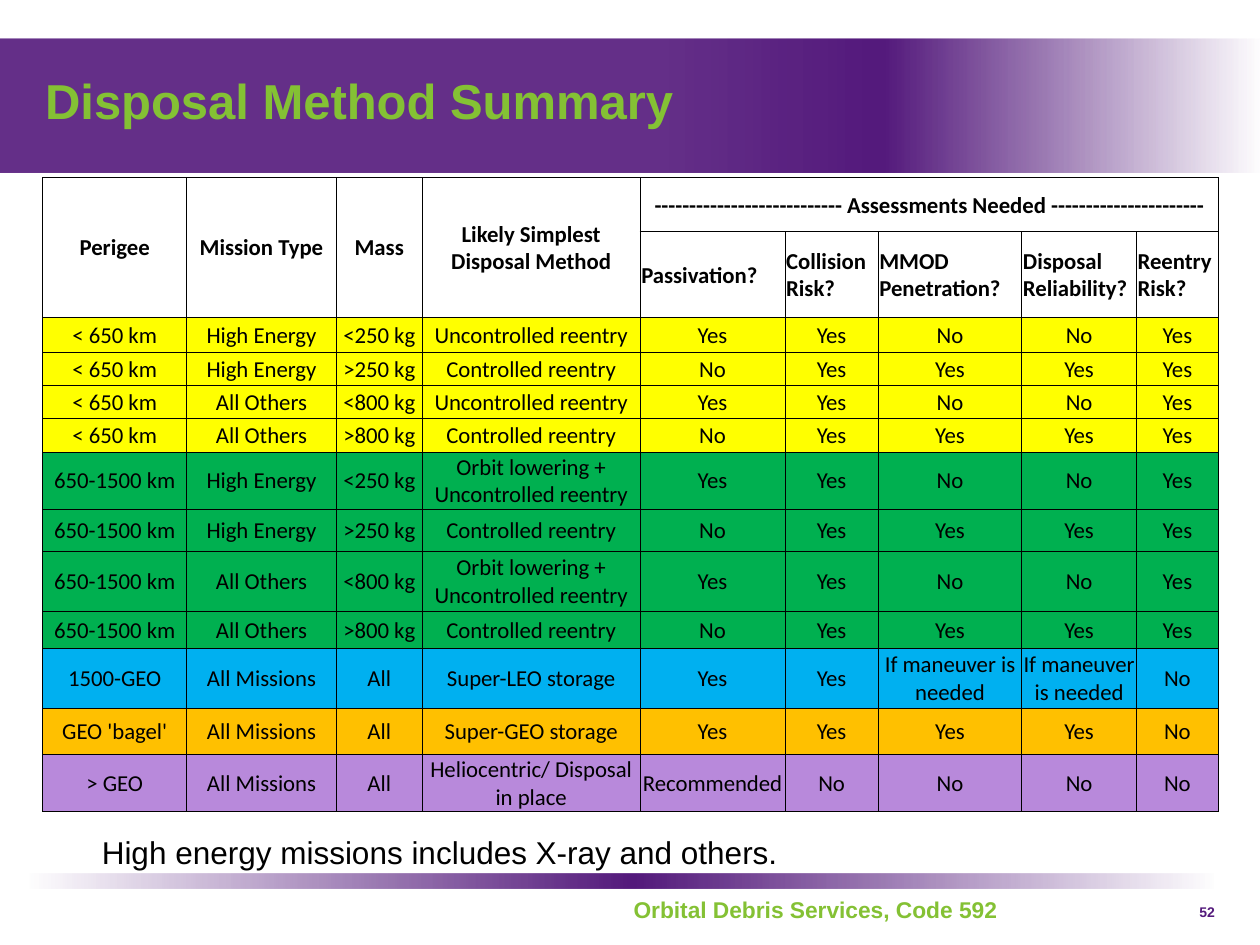
from pptx import Presentation
from pptx.dml.color import RGBColor as RGB
from pptx.enum.shapes import MSO_SHAPE as SHAPE
from pptx.enum.text import MSO_ANCHOR as ANCHOR, PP_ALIGN as ALIGN
from pptx.oxml.ns import qn
from pptx.util import Inches, Pt
from lxml.etree import SubElement

WIDTH, HEIGHT = Inches(10), Inches(7.5)

PURPLE = RGB(0x54, 0x1A, 0x7C)
LIME = RGB(0x84, 0xC1, 0x34)
BLACK = RGB(0, 0, 0)
YELLOW = RGB(0xFF, 0xFF, 0)
GREEN = RGB(0, 0xB0, 0x50)
BLUE = RGB(0, 0xB0, 0xF0)
ORANGE = RGB(0xFF, 0xC0, 0)
LILAC = RGB(0xB8, 0x89, 0xDB)

COLUMNS = [11.4, 11.9, 6.8, 17.3, 11.5, 7.4, 11.4, 9.1, 6.5]
ROWS = [5.73, 9.07, 3.73, 3.47, 3.47, 3.6, 6, 4.53, 6.27, 4, 6.27, 4.93, 6]
GROUPS = ["Perigee", "Mission Type", "Mass", "Likely Simplest Disposal Method"]
ASSESSMENTS = ["Passivation?", "Collision Risk?", "MMOD Penetration?",
               "Disposal Reliability?", "Reentry Risk?"]
SPANNER = "-" * 27 + " Assessments Needed " + "-" * 22

UNCONTROLLED = ["Yes", "Yes", "No", "No", "Yes"]
CONTROLLED = ["No", "Yes", "Yes", "Yes", "Yes"]
MANEUVER = "If maneuver is needed"
MISSIONS = [("High Energy", "250 kg"), ("All Others", "800 kg")]
LOW_ORBITS = [("< 650 km", YELLOW, "Uncontrolled reentry"),
              ("650-1500 km", GREEN, "Orbit lowering + Uncontrolled reentry")]
HIGH_ORBITS = [
    ("1500-GEO", BLUE, "Super-LEO storage", ["Yes", "Yes", MANEUVER, MANEUVER, "No"]),
    ("GEO 'bagel'", ORANGE, "Super-GEO storage", ["Yes"] * 4 + ["No"]),
    ("> GEO", LILAC, "Heliocentric/ Disposal in place", ["Recommended"] + ["No"] * 4),
]


def across(percent):
    return round(WIDTH * percent / 100)


def down(percent):
    return round(HEIGHT * percent / 100)


def area(x, y, w, h):
    return across(x), down(y), across(w), down(h)


def write(tf, text, size, color=BLACK, bold=False, name="Arial", align=ALIGN.LEFT):
    p = tf.paragraphs[0]
    p.alignment = align
    r = p.add_run()
    r.text = text
    for key, value in {"name": name, "size": Pt(size), "bold": bold}.items():
        setattr(r.font, key, value)
    r.font.color.rgb = color
    return p


def add_text(s, place, text, size, anchor=ANCHOR.TOP, **style):
    tf = s.shapes.add_textbox(*area(*place)).text_frame
    for key, value in {"word_wrap": True, "vertical_anchor": anchor}.items():
        setattr(tf, key, value)
    return write(tf, text, size, **style)


def add_band(s, place, stops):
    sp = s.shapes.add_shape(SHAPE.RECTANGLE, *area(*place))
    sp.shadow.inherit = False
    sp.line.fill.background()
    sp.fill.gradient()
    sp.fill.gradient_angle = 0
    gradient = next(sp._element.iter(qn("a:gsLst")))
    gradient.clear()
    for position, alpha in stops:
        stop = SubElement(gradient, qn("a:gs"), pos=str(position * 1000))
        color = SubElement(stop, qn("a:srgbClr"), val=str(PURPLE))
        SubElement(color, qn("a:alpha"), val=str(alpha * 1000))


def add_borders(cell):
    props = cell._tc.get_or_add_tcPr()
    for side in ("lnL", "lnR", "lnT", "lnB"):
        line = SubElement(props, qn(f"a:{side}"), w=str(Pt(0.5)))
        fill = SubElement(line, qn("a:solidFill"))
        SubElement(fill, qn("a:srgbClr"), val=str(BLACK))


def format_cell(cell, color=None):
    margin = Inches(0.01)
    layout = {"margin_left": margin, "margin_right": margin, "margin_top": margin,
              "margin_bottom": 0, "vertical_anchor": ANCHOR.MIDDLE}
    for key, value in layout.items():
        setattr(cell, key, value)
    add_borders(cell)
    if color is None:
        cell.fill.background()
    else:
        cell.fill.solid()
        cell.fill.fore_color.rgb = color


def fill_cell(cell, text, bold=False, align=ALIGN.CENTER):
    write(cell.text_frame, text, 13, bold=bold, name="Calibri", align=align)


def disposal_rows():
    rows = []
    for perigee, color, light_method in LOW_ORBITS:
        for mission, limit in MISSIONS:
            rows.append((color, [perigee, mission, "<" + limit, light_method] + UNCONTROLLED))
            rows.append((color, [perigee, mission, ">" + limit, "Controlled reentry"] + CONTROLLED))
    for perigee, color, method, answers in HIGH_ORBITS:
        rows.append((color, [perigee, "All Missions", "All", method] + answers))
    return rows


def add_header(table):
    for row in (0, 1):
        for col in range(len(COLUMNS)):
            format_cell(table.cell(row, col))
    for col, text in enumerate(GROUPS):
        table.cell(0, col).merge(table.cell(1, col))
        fill_cell(table.cell(0, col), text, bold=True)
    first = len(GROUPS)
    table.cell(0, first).merge(table.cell(0, len(COLUMNS) - 1))
    fill_cell(table.cell(0, first), SPANNER, bold=True)
    for col, text in enumerate(ASSESSMENTS, first):
        fill_cell(table.cell(1, col), text, bold=True, align=ALIGN.LEFT)


def add_disposal_table(s):
    place = area(3.4, 18.8, sum(COLUMNS), sum(ROWS))
    table = s.shapes.add_table(len(ROWS), len(COLUMNS), *place).table
    table.first_row = table.horz_banding = False
    for column, width in zip(table.columns, COLUMNS):
        column.width = across(width)
    for row, height in zip(table.rows, ROWS):
        row.height = down(height)
    add_header(table)
    for row, (color, texts) in enumerate(disposal_rows(), 2):
        for col, text in enumerate(texts):
            format_cell(table.cell(row, col), color)
            fill_cell(table.cell(row, col), text)


def main():
    prs = Presentation()
    prs.slide_width, prs.slide_height = WIDTH, HEIGHT
    s = prs.slides.add_slide(prs.slide_layouts[6])
    add_band(s, (0, 4.13, 100, 14.13), [(53, 90), (70, 100), (100, 0)])
    add_band(s, (2.3, 92.4, 94.1, 1.6), [(0, 0), (51, 100), (100, 0)])
    add_text(s, (49.3, 94.13, 32.2, 4.8), "Orbital Debris Services, Code 592", 13,
             color=LIME, bold=True)
    title = add_text(s, (2.6, 5.47, 94, 11.07), "Disposal Method Summary", 28,
                     anchor=ANCHOR.MIDDLE, color=LIME, bold=True)
    title.line_spacing = 0.9
    add_disposal_table(s)
    add_text(s, (7.1, 87.47, 77.3, 5.33),
             "High energy missions includes X-ray and others.", 18)
    add_text(s, (93.5, 94.93, 3.9, 3.33), "52", 8, color=PURPLE, bold=True,
             align=ALIGN.RIGHT)
    prs.save("out.pptx")


if __name__ == "__main__":
    main()
